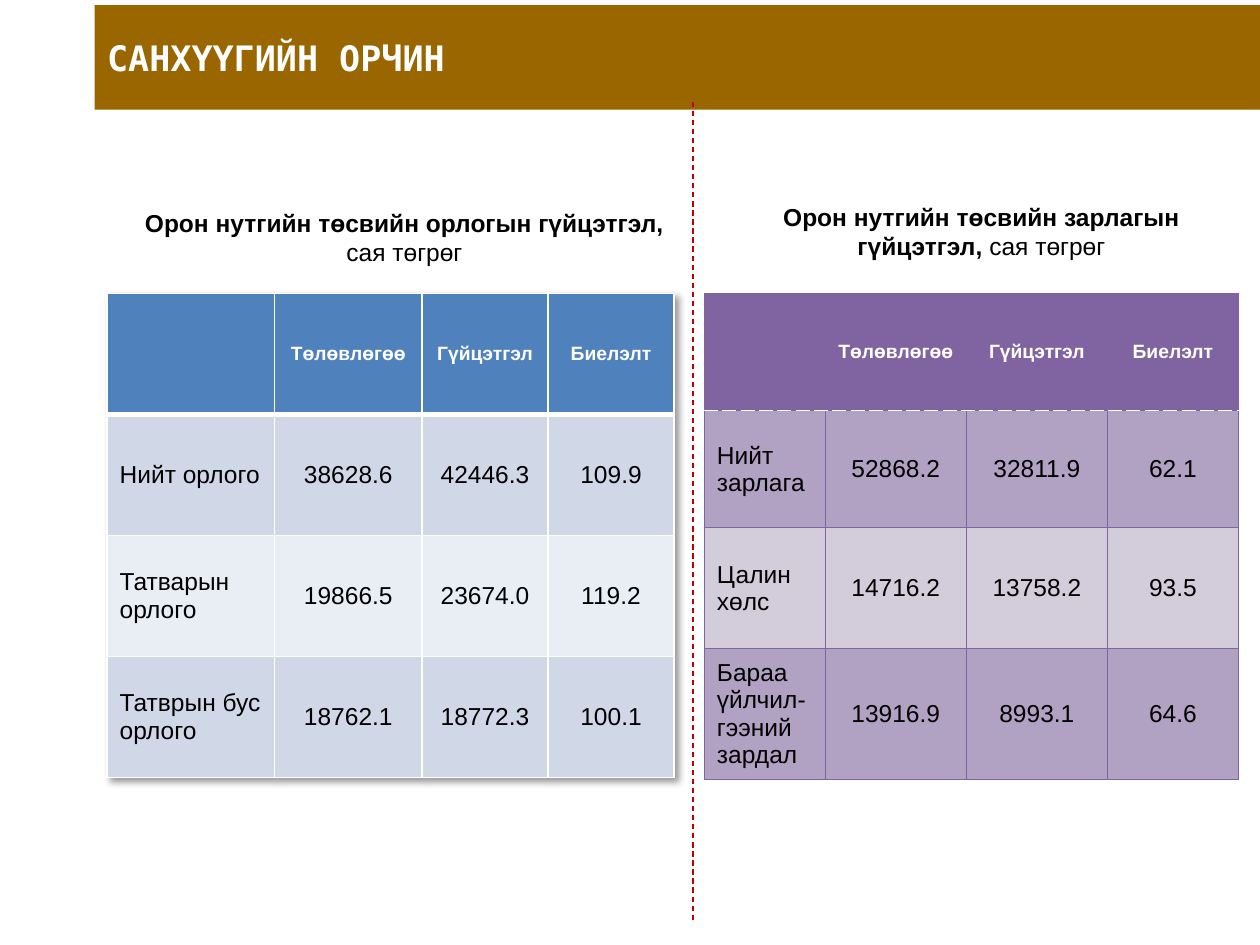
from lxml.etree import SubElement
from pptx import Presentation
from pptx.dml.color import RGBColor
from pptx.enum.dml import MSO_LINE
from pptx.enum.shapes import MSO_CONNECTOR
from pptx.enum.text import MSO_ANCHOR, MSO_AUTO_SIZE, PP_ALIGN
from pptx.oxml import parse_xml
from pptx.oxml.ns import nsdecls, qn
from pptx.util import Inches, Pt

BROWN = RGBColor(0x99, 0x66, 0x00)
RED = RGBColor(0xC0, 0x00, 0x00)
WHITE = RGBColor(0xFF, 0xFF, 0xFF)
BLACK = RGBColor(0x00, 0x00, 0x00)
BLUE = RGBColor(0x4F, 0x81, 0xBD)
BLUE_MID = RGBColor(0xD0, 0xD8, 0xE8)
BLUE_PALE = RGBColor(0xE9, 0xED, 0xF4)
PURPLE = RGBColor(0x80, 0x64, 0xA2)
PURPLE_MID = RGBColor(0xB1, 0xA1, 0xC3)
PURPLE_PALE = RGBColor(0xD3, 0xCC, 0xDB)

HEADINGS = ["", "Төлөвлөгөө", "Гүйцэтгэл", "Биелэлт"]
INCOME = [
    ["Нийт орлого", "38628.6", "42446.3", "109.9"],
    ["Татварын орлого", "19866.5", "23674.0", "119.2"],
    ["Татврын бус орлого", "18762.1", "18772.3", "100.1"],
]
EXPENSE = [
    ["Нийт зарлага", "52868.2", "32811.9", "62.1"],
    ["Цалин хөлс", "14716.2", "13758.2", "93.5"],
    ["Бараа үйлчил-гээний зардал", "13916.9", "8993.1", "64.6"],
]
INCOME_STYLE = {
    "head": BLUE, "bands": (BLUE_MID, BLUE_PALE),
    "edge": (WHITE, 1, "solid"), "rule": (WHITE, 3, "solid"), "shadow": True,
}
EXPENSE_STYLE = {
    "head": PURPLE, "bands": (PURPLE_MID, PURPLE_PALE),
    "edge": (PURPLE, 0.75, "solid"), "rule": (WHITE, 0.9, "sysDash"), "shadow": False,
}


class SlideBuilder:
    heading = {"name": "DejaVu Sans Mono", "size": Pt(20), "bold": True}
    caption_bold = {"name": "Arial", "size": Pt(14), "bold": True}
    body = {"name": "Arial", "size": Pt(14), "bold": False}
    table_head = {"name": "Arial", "size": Pt(11), "bold": True}

    def __init__(self, prs):
        self.s = prs.slides.add_slide(prs.slide_layouts[5])

    def run(self, p, text, style, color):
        r = p.add_run()
        r.text = text
        for name, value in style.items():
            setattr(r.font, name, value)
        r.font.color.rgb = color

    def title(self, text, x, y, w, h):
        sp = self.s.shapes.title
        sp.left, sp.top, sp.width, sp.height = map(Inches, (x, y, w, h))
        sp.fill.solid()
        sp.fill.fore_color.rgb = BROWN
        tf = sp.text_frame
        tf.auto_size = MSO_AUTO_SIZE.NONE
        tf.vertical_anchor = MSO_ANCHOR.MIDDLE
        p = tf.paragraphs[0]
        p.alignment = PP_ALIGN.JUSTIFY
        self.run(p, text, self.heading, WHITE)

    def divider(self, x, top, bottom):
        line = self.s.shapes.add_connector(
            MSO_CONNECTOR.STRAIGHT, Inches(x), Inches(top), Inches(x), Inches(bottom))
        line.line.color.rgb = RED
        line.line.width = Pt(0.75)
        line.line.dash_style = MSO_LINE.DASH
        SubElement(line._element.spPr, qn("a:effectLst"))

    def caption(self, subject, unit, x, y, w, h):
        sp = self.s.shapes.add_textbox(*map(Inches, (x, y, w, h)))
        tf = sp.text_frame
        tf.word_wrap = True
        tf.vertical_anchor = MSO_ANCHOR.MIDDLE
        p = tf.paragraphs[0]
        p.alignment = PP_ALIGN.CENTER
        self.run(p, subject, self.caption_bold, BLACK)
        self.run(p, unit, self.body, BLACK)

    def borders(self, cell, sides):
        """Set the left, right, top and bottom lines, which must precede the fill."""
        tc_pr = cell._tc.get_or_add_tcPr()
        for i, (side, (color, width, dash)) in enumerate(zip("LRTB", sides)):
            tc_pr.insert(i, parse_xml(
                f'<a:ln{side} {nsdecls("a")} w="{Pt(width)}"><a:solidFill>'
                f'<a:srgbClr val="{color}"/></a:solidFill>'
                f'<a:prstDash val="{dash}"/></a:ln{side}>'))

    def table(self, x, y, cols, rows, records, style):
        data = [HEADINGS] + records
        frame = self.s.shapes.add_table(
            len(rows), len(cols), *map(Inches, (x, y, sum(cols), sum(rows))))
        table = frame.table
        for column, width in zip(table.columns, cols):
            column.width = Inches(width)
        for row, height in zip(table.rows, rows):
            row.height = Inches(height)
        edge, rule = style["edge"], style["rule"]
        for i, record in enumerate(data):
            for j, text in enumerate(record):
                cell = table.cell(i, j)
                cell.vertical_anchor = MSO_ANCHOR.MIDDLE
                cell.fill.solid()
                cell.fill.fore_color.rgb = style["bands"][(i - 1) % 2] if i else style["head"]
                self.borders(cell, (edge, edge, rule if i == 1 else edge, edge if i else rule))
                if text:
                    p = cell.text_frame.paragraphs[0]
                    p.alignment = PP_ALIGN.CENTER if j else PP_ALIGN.LEFT
                    self.run(p, text, self.body if i else self.table_head, BLACK if i else WHITE)
        if style["shadow"]:
            table._tbl.tblPr.insert(0, parse_xml(
                f'<a:effectLst {nsdecls("a")}><a:outerShdw blurRad="50800" dist="38100" '
                'dir="2700000" algn="tl" rotWithShape="0"><a:srgbClr val="000000">'
                '<a:alpha val="40000"/></a:srgbClr></a:outerShdw></a:effectLst>'))


def main():
    prs = Presentation()
    prs.slide_width, prs.slide_height = Inches(10), Inches(7.5)
    slide = SlideBuilder(prs)
    slide.title("САНХҮҮГИЙН ОРЧИН", 0.75, 0.04, 9.25, 0.83)
    slide.divider(5.5, 0.81, 7.31)
    unit = " сая төгрөг"
    slide.caption("Орон нутгийн төсвийн орлогын гүйцэтгэл,", unit, 0.92, 1.67, 4.58, 0.42)
    slide.table(0.85, 2.33, [1.33, 1.17, 1, 1], [0.96] * 4, INCOME, INCOME_STYLE)
    slide.caption("Орон нутгийн төсвийн зарлагын гүйцэтгэл,", unit, 5.75, 1.67, 4.08, 0.33)
    slide.table(5.59, 2.33, [0.96, 1.12, 1.12, 1.04], [0.93, 0.93, 0.96, 1.03],
                EXPENSE, EXPENSE_STYLE)
    prs.save("out.pptx")


if __name__ == "__main__":
    main()
